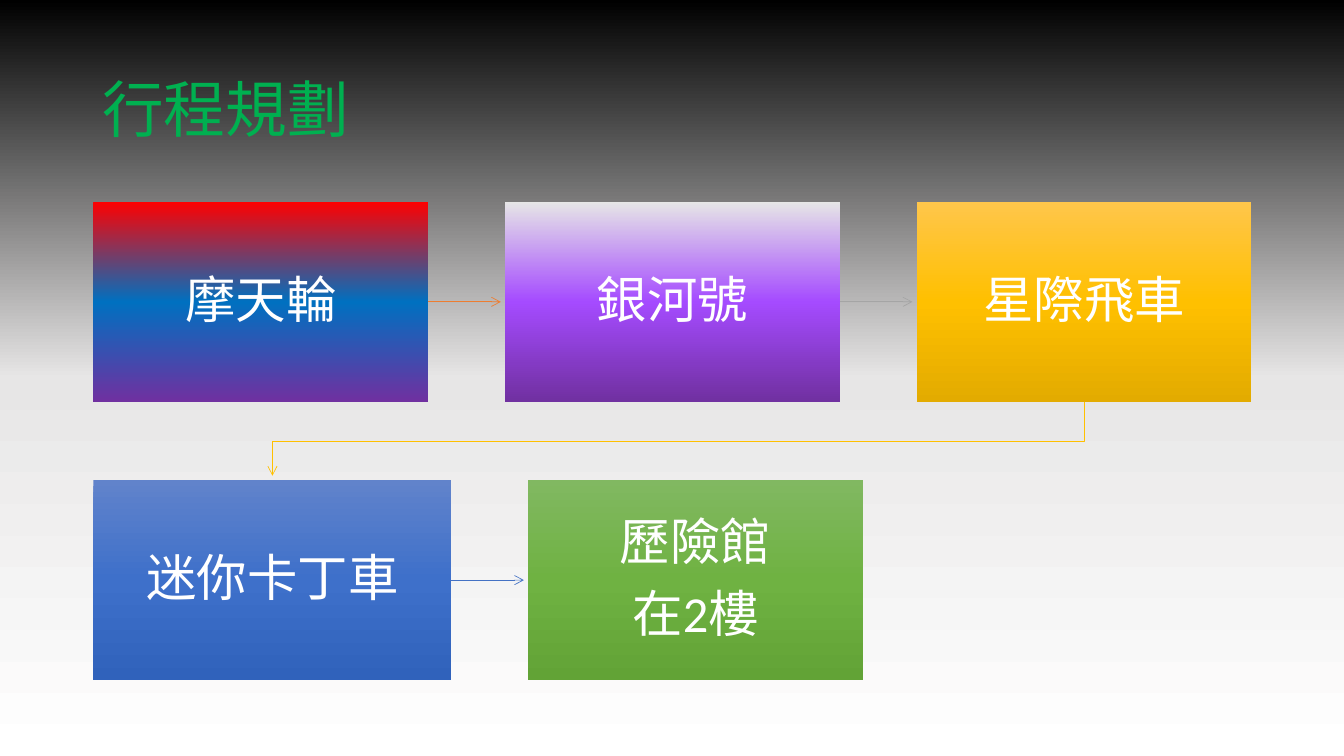
"""Build the ride itinerary slide with five linked stops."""
import dataclasses
import typing

import lxml.etree
import pptx
import pptx.dml.color
import pptx.enum.shapes
import pptx.enum.text
import pptx.oxml.ns
import pptx.util

PX = 9525
LEFT, TOP = 89, 192
WIDE, HIGH = 319, 191
GAP, DROP = 73, 74
SHORT = 4
INSET = 27
LOW = TOP + HIGH + DROP
CJK = "Noto Sans CJK JP"

HUES = {
    "title": "00B050", "text": "FFFFFF",
    "orange": "ED7D31", "gray": "A5A5A5", "gold": "FFC000", "blue": "4472C4",
}
FADES = {
    "back": ("FFFFFF", "E7E6E6", "000000"),
    "wheel": ("FF0000", "0070C0", "7030A0"),
    "river": ("E6E6E6", "A54BFF", "7030A0"),
    "star": ("FFC64B", "FFC000", "E3AB00"),
    "kart": ("6183CB", "3E70CA", "3062BB"),
    "house": ("81B861", "6FB242", "62A336"),
}


@dataclasses.dataclass(frozen=True)
class Stop:
    lines: tuple[str, ...]
    fade: str
    wide: int = WIDE
    link: str = ""


ROWS = (
    (TOP, (Stop(("摩天輪",), "wheel", link="orange"),
           Stop(("銀河號",), "river", link="gray"),
           Stop(("星際飛車",), "star"))),
    (LOW, (Stop(("迷你卡丁車",), "kart", 341, "blue"),
           Stop(("歷險館", "在2樓"), "house"))),
)


def px(num: float) -> int:
    return int(num * PX)


def tone(name: str) -> typing.Any:
    return pptx.dml.color.RGBColor.from_string(HUES[name])


def tag(root: typing.Any, name: str, **vals: str) -> typing.Any:
    return lxml.etree.SubElement(root, pptx.oxml.ns.qn(name), vals)


def assign(item: typing.Any, form: dict[str, typing.Any]) -> None:
    for key, val in form.items():
        setattr(item, key, val)


def shade(fill: typing.Any, root: typing.Any, name: str, angle: int) -> None:
    fill.gradient()
    fill.gradient_angle = angle
    stops = root.find(".//" + pptx.oxml.ns.qn("a:gsLst"))
    for node in list(stops):
        stops.remove(node)
    for spot, hue in enumerate(FADES[name]):
        tag(tag(stops, "a:gs", pos=str(spot * 50000)), "a:srgbClr", val=hue)


def write(para: typing.Any, text: str, size: int, face: str, hue: str) -> None:
    run = para.add_run()
    run.text = text
    assign(run.font, {"size": pptx.util.Pt(size), "name": face})
    run.font.color.rgb = tone(hue)
    tag(run.font._element, "a:ea", typeface=CJK)


def arrow(line: typing.Any, hue: str) -> None:
    line.line.color.rgb = tone(hue)
    line.line.width = pptx.util.Pt(0.5)
    root = line._element.spPr
    tag(root.find(pptx.oxml.ns.qn("a:ln")), "a:tailEnd", type="arrow")


def box(slide: typing.Any, stop: Stop, left: int, top: int) -> typing.Any:
    shape = slide.shapes.add_shape(
        pptx.enum.shapes.MSO_SHAPE.RECTANGLE,
        px(left), px(top), px(stop.wide), px(HIGH))
    shape.shadow.inherit = False
    shade(shape.fill, shape._element, stop.fade, 270)
    shape.line.fill.background()
    frame = shape.text_frame
    sides = ("left", "top", "right", "bottom")
    assign(frame, {f"margin_{side}": px(INSET) for side in sides})
    assign(frame, {"word_wrap": True,
                   "vertical_anchor": pptx.enum.text.MSO_ANCHOR.MIDDLE})
    for spot, text in enumerate(stop.lines):
        para = frame.add_paragraph() if spot else frame.paragraphs[0]
        assign(para, {"alignment": pptx.enum.text.PP_ALIGN.CENTER,
                      "line_spacing": 0.9})
        after = tag(para._p.get_or_add_pPr(), "a:spcAft")
        tag(after, "a:spcPct", val="35000")
        write(para, text, 36, "Calibri", "text")
    return shape


def link(slide: typing.Any, shape: typing.Any, hue: str) -> None:
    start = shape.left + shape.width
    mid = shape.top + shape.height // 2
    line = slide.shapes.add_connector(
        pptx.enum.shapes.MSO_CONNECTOR.STRAIGHT,
        start, mid, start + px(GAP - SHORT), mid)
    line.begin_connect(shape, 3)
    arrow(line, hue)
    tag(line._element.spPr, "a:effectLst")


def bend(slide: typing.Any, first: typing.Any, last: typing.Any) -> None:
    start, end = (item.left + item.width // 2 for item in (first, last))
    base = first.top + first.height
    turn = base + px(DROP // 2)
    path = slide.shapes.build_freeform(start, base)
    path.add_line_segments(
        [(start, turn), (end, turn), (end, last.top - px(SHORT))], close=False)
    line = path.convert_to_shape()
    line.shadow.inherit = False
    line.fill.background()
    arrow(line, "gold")


def title(slide: typing.Any) -> None:
    frame = slide.shapes.add_textbox(px(88), px(38), px(1104), px(139)).text_frame
    assign(frame, {"word_wrap": True,
                   "vertical_anchor": pptx.enum.text.MSO_ANCHOR.MIDDLE})
    para = frame.paragraphs[0]
    para.line_spacing = 0.9
    write(para, "行程規劃", 44, CJK, "title")


def main() -> None:
    deck = pptx.Presentation()
    assign(deck, {"slide_width": px(1280), "slide_height": px(720)})
    slide = deck.slides.add_slide(deck.slide_layouts[6])
    shade(slide.background.fill, slide._element, "back", 90)
    title(slide)
    rows = []
    for top, stops in ROWS:
        left, row = LEFT, []
        for stop in stops:
            row.append(box(slide, stop, left, top))
            if stop.link:
                link(slide, row[-1], stop.link)
            left += stop.wide + GAP
        rows.append(row)
    bend(slide, rows[0][-1], rows[1][0])
    deck.save("out.pptx")


if __name__ == "__main__":
    main()
